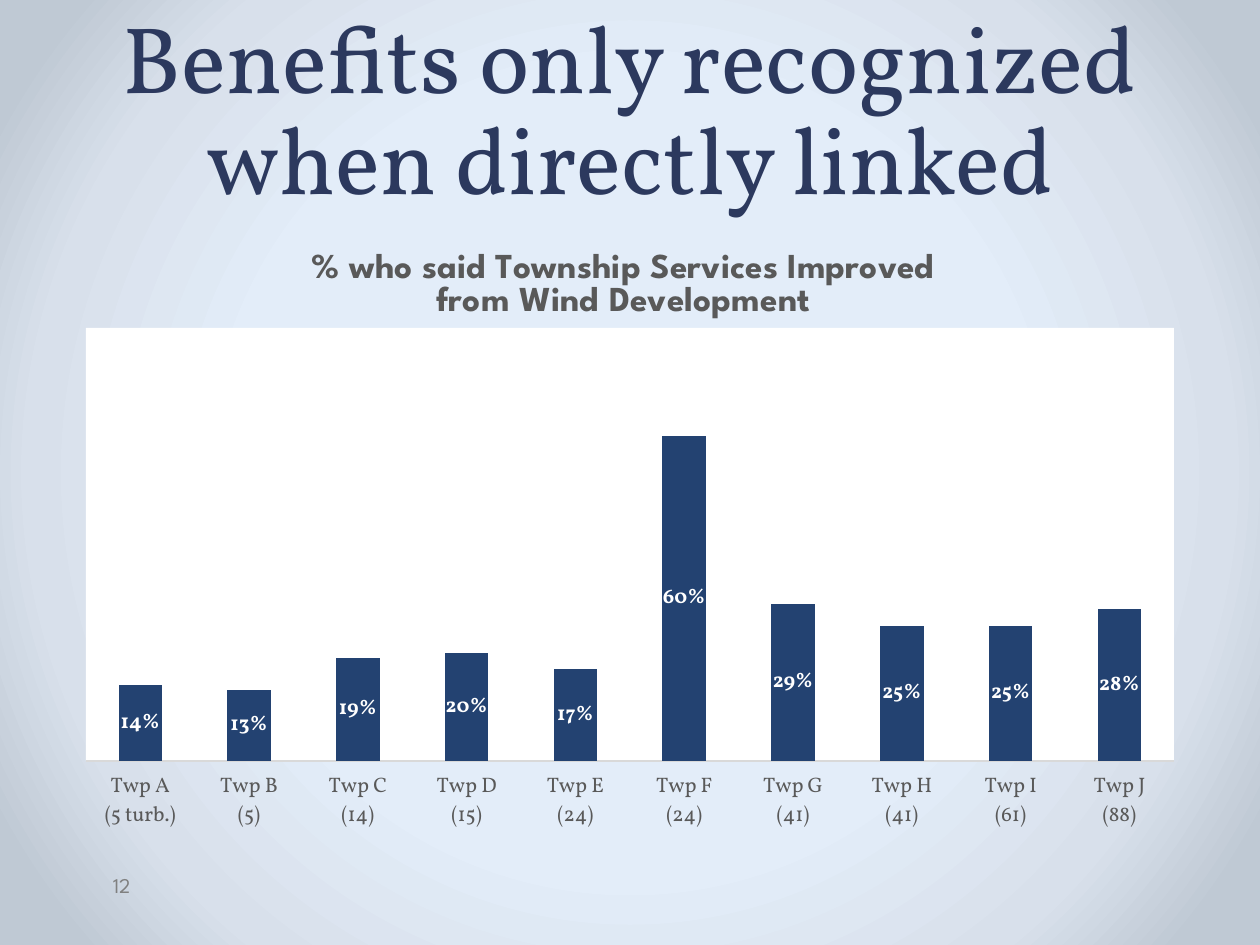
from pptx import Presentation
from pptx.chart.data import CategoryChartData
from pptx.dml.color import RGBColor
from pptx.enum.chart import XL_CHART_TYPE, XL_LABEL_POSITION, XL_TICK_LABEL_POSITION, XL_TICK_MARK
from pptx.enum.text import MSO_ANCHOR, PP_ALIGN
from pptx.oxml import parse_xml
from pptx.oxml.ns import nsdecls, qn
from pptx.util import Emu, Pt

EMU_PER_PX = 914400 / 126
CENTER, RIGHT = PP_ALIGN.CENTER, PP_ALIGN.RIGHT
BOTTOM, TOP = MSO_ANCHOR.BOTTOM, MSO_ANCHOR.TOP
NO_TICK = XL_TICK_MARK.NONE
LABELS_LOW = XL_TICK_LABEL_POSITION.LOW
LABEL_CENTER = XL_LABEL_POSITION.CENTER
STACKED = XL_CHART_TYPE.COLUMN_STACKED

SERIF, SANS = "Vollkorn", "League Spartan"
NAVY = RGBColor(0x2C, 0x39, 0x5E)
BAR_BLUE = RGBColor(0x23, 0x42, 0x71)
TEXT_GRAY = RGBColor(0x59, 0x59, 0x59)
NUMBER_GRAY = RGBColor(0x80, 0x80, 0x80)
AXIS_GRAY = RGBColor(0xD9, 0xD9, 0xD9)
WHITE = RGBColor(0xFF, 0xFF, 0xFF)
BLACK = RGBColor(0x00, 0x00, 0x00)
BACKDROP = [(50, RGBColor(0xE3, 0xED, 0xF9)), (76, RGBColor(0xD8, 0xE0, 0xEB)),
            (92, RGBColor(0xBF, 0xC9, 0xD4))]


def px(*lengths):
    return [Emu(round(length * EMU_PER_PX)) for length in lengths]


def write(frame, text, *, font, size, color, bold=False, align=CENTER, anchor=TOP, spacing=None):
    frame.word_wrap = True
    frame.vertical_anchor = anchor
    frame.text = text
    for paragraph in frame.paragraphs:
        paragraph.alignment = align
        paragraph.line_spacing = spacing
        for run in paragraph.runs:
            run.font.name = font
            run.font.size = Pt(size)
            run.font.bold = bold
            run.font.color.rgb = color


deck = Presentation()
deck.slide_width, deck.slide_height = px(1260, 945)
slide = deck.slides.add_slide(deck.slide_layouts[6])

stops = "".join(f'<a:gs pos="{position * 1000}"><a:srgbClr val="{color}"/></a:gs>'
                for position, color in BACKDROP)
slide.element.cSld.insert(0, parse_xml(
    f'<p:bg {nsdecls("p", "a")}><p:bgPr><a:gradFill rotWithShape="1"><a:gsLst>{stops}</a:gsLst>'
    '<a:path path="circle"><a:fillToRect l="50000" t="50000" r="50000" b="50000"/></a:path>'
    '</a:gradFill><a:effectLst/></p:bgPr></p:bg>'))

headline = slide.shapes.add_textbox(*px(63, 0, 1134, 220))
write(headline.text_frame, "Benefits only recognized when directly linked",
      font=SERIF, size=54, color=NAVY, anchor=BOTTOM, spacing=Pt(58))

page_number = slide.shapes.add_textbox(*px(66, 866, 77, 50))
write(page_number.text_frame, "12", font=SANS, size=12, color=NUMBER_GRAY, align=RIGHT)

townships = [("Twp A", "5 turb.", 0.14), ("Twp B", "5", 0.13), ("Twp C", "14", 0.19),
             ("Twp D", "15", 0.2), ("Twp E", "24", 0.17), ("Twp F", "24", 0.6),
             ("Twp G", "41", 0.29), ("Twp H", "41", 0.25), ("Twp I", "61", 0.25),
             ("Twp J", "88", 0.28)]
survey = CategoryChartData(number_format="0%")
survey.categories = [f"{name}\n({turbines})" for name, turbines, share in townships]
survey.add_series("Series 1", [share for name, turbines, share in townships])

chart_left, chart_top, chart_width, chart_height = 63, 220, 1134, 624
chart = slide.shapes.add_chart(
    STACKED, *px(chart_left, chart_top, chart_width, chart_height), survey).chart
chart.has_legend = False
chart.font.name = SERIF
chart.font.size = Pt(10)
chart.font.color.rgb = BLACK

chart.has_title = True
write(chart.chart_title.text_frame,
      "% who said Township Services Improved\nfrom Wind Development",
      font=SANS, size=20, color=TEXT_GRAY, bold=True)
chart.chart_title.include_in_layout = True

townships_axis = chart.category_axis
townships_axis.major_tick_mark = NO_TICK
townships_axis.tick_label_position = LABELS_LOW
townships_axis.tick_labels.font.name = SERIF
townships_axis.tick_labels.font.size = Pt(12)
townships_axis.tick_labels.font.color.rgb = TEXT_GRAY
townships_axis.format.line.color.rgb = AXIS_GRAY
townships_axis.format.line.width = Pt(0.75)

share_axis = chart.value_axis
share_axis.minimum_scale = 0
share_axis.maximum_scale = 0.8
share_axis.has_major_gridlines = False
share_axis.visible = False

bars = chart.plots[0]
bars.gap_width = 150
bars.overlap = 100
bars.vary_by_categories = False
shares = bars.series[0]
shares.format.fill.solid()
shares.format.fill.fore_color.rgb = BAR_BLUE

share_labels = shares.data_labels
share_labels.show_value = True
share_labels.position = LABEL_CENTER
share_labels.number_format = "0%"
share_labels.number_format_is_linked = False
share_labels.font.name = SERIF
share_labels.font.size = Pt(12)
share_labels.font.bold = True
share_labels.font.color.rgb = WHITE

plot_area = chart.element.find(".//" + qn("c:plotArea"))
chart_title = chart.element.find(".//" + qn("c:title"))
plot_area.append(parse_xml(
    f'<c:spPr {nsdecls("c", "a")}><a:solidFill><a:srgbClr val="{WHITE}"/></a:solidFill></c:spPr>'))

plot_layout = (f'<c:layoutTarget val="inner"/>{{}}<c:w val="{1088 / chart_width:.4f}"/>'
               f'<c:h val="{433 / chart_height:.4f}"/>')
for part, index, left, top, template in [(plot_area, 0, 86, 328, plot_layout),
                                         (chart_title, 1, 308, 247, "{}")]:
    automatic = part.find(qn("c:layout"))
    if automatic is not None:
        part.remove(automatic)
    position = (f'<c:xMode val="edge"/><c:yMode val="edge"/>'
                f'<c:x val="{(left - chart_left) / chart_width:.4f}"/>'
                f'<c:y val="{(top - chart_top) / chart_height:.4f}"/>')
    part.insert(index, parse_xml(
        f'<c:layout {nsdecls("c")}><c:manualLayout>{template.format(position)}'
        '</c:manualLayout></c:layout>'))

deck.save("out.pptx")
